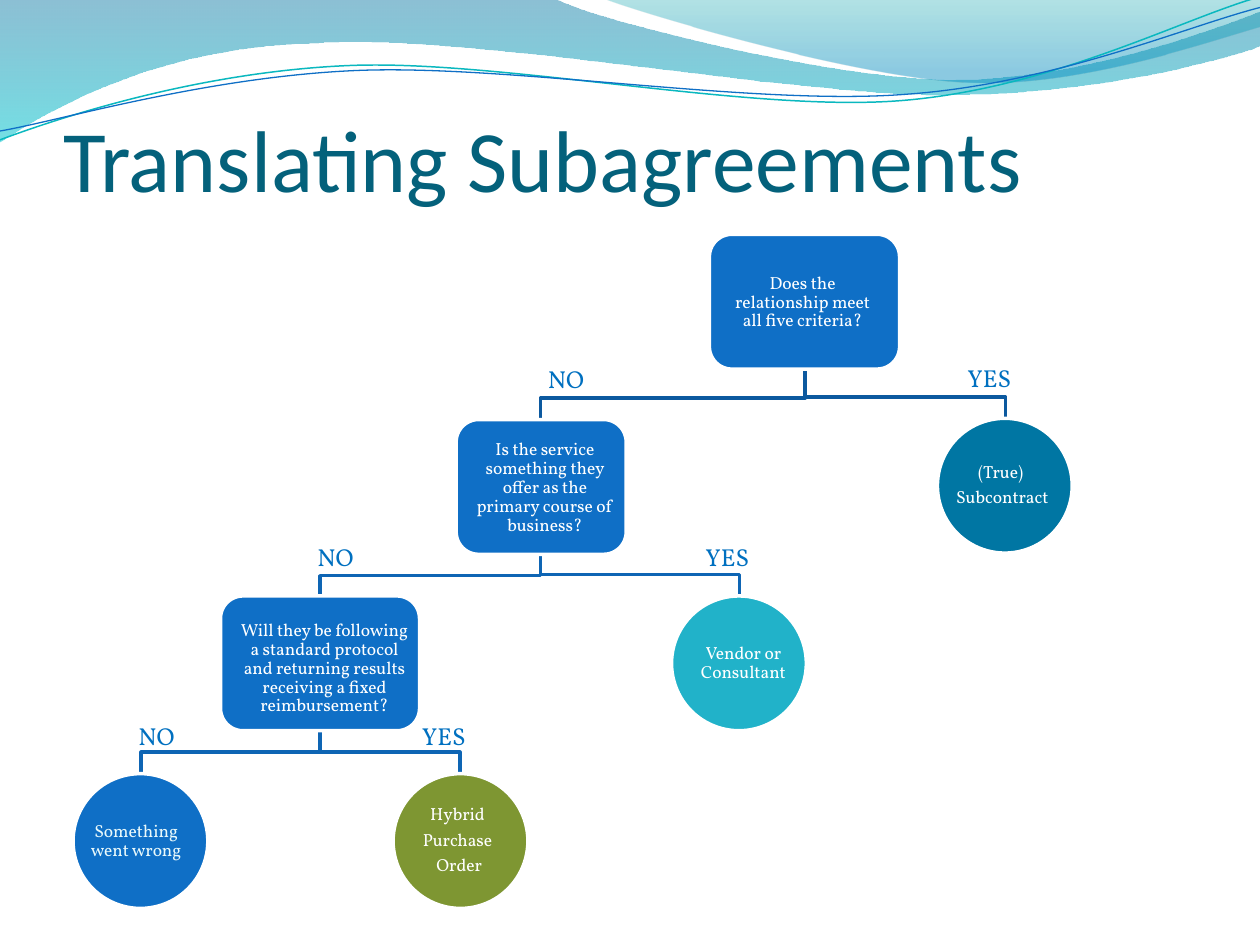
import math

from lxml import etree
from pptx import Presentation
from pptx.dml.color import RGBColor
from pptx.enum.shapes import MSO_SHAPE
from pptx.enum.text import MSO_ANCHOR, MSO_AUTO_SIZE, PP_ALIGN
from pptx.oxml.ns import qn
from pptx.util import Inches, Pt

ROUNDED, CIRCLE = MSO_SHAPE.ROUNDED_RECTANGLE, MSO_SHAPE.OVAL
MIDDLE, BOTTOM = MSO_ANCHOR.MIDDLE, MSO_ANCHOR.BOTTOM
LEFT, CENTER = PP_ALIGN.LEFT, PP_ALIGN.CENTER
GROW = MSO_AUTO_SIZE.SHAPE_TO_FIT_TEXT
FONT = "Vollkorn"
COLORS = {
    "title": "04617B", "label": "0070C0", "white": "FFFFFF", "pale": "E9F9FB",
    "blue": "0F6FC6", "green": "7E9632", "aqua": "21B2C9", "teal": "0076A3",
    "branch_top": "0C599F", "branch": "0E65B4", "wave_line": "0AB8BF",
    "wave_top": "0074A1", "wave_bottom": "00C6CF",
    "crest_top": "00A1A9", "crest_bottom": "008BBF",
}
NODE_H = 1.07
WAVE_TILT = -2.7

# A pair is a straight step to a point; six numbers are a Bézier curve.
WAVE = [(0, 0), (4.4, -0.01), (4.76, 0.17, 6.64, 0.63, 7.58, 0.63),
        (8.53, 0.63, 9.58, 0.26, 10, 0.09), (10.01, 0.36),
        (9.83, 0.44, 8.7, 0.76, 7.46, 0.75), (6.22, 0.75, 3.82, 0.28, 2.57, 0.34),
        (1.29, 0.36, 0.46, 0.83, -0.01, 1.13), (0, 0)]
CREST = [(4.79, -0.01), (5.09, 0.11, 6.82, 0.62, 7.69, 0.65),
         (8.56, 0.69, 9.61, 0.32, 10, 0.21), (10, 0), (4.79, -0.01)]
UPPER_LINE = [(0, 1.11), (0.48, 0.93, 1.58, 0.57, 2.77, 0.52),
              (3.95, 0.47, 5.93, 0.89, 7.13, 0.8), (8.33, 0.71, 9.38, 0.15, 9.98, -0.02)]
LOWER_LINE = [(0, 1.04), (0.47, 0.96, 1.64, 0.61, 2.83, 0.56),
              (4.03, 0.51, 5.97, 0.84, 7.17, 0.75), (8.36, 0.67, 9.41, 0.21, 10, 0.06)]

# Child centre x, top y of parent's exit, centre x of parent, bar y, child top, colour
BRANCHES = [
    (7.98, 2.93, 6.39, 3.15, 3.32, "branch_top"),
    (5.87, 4.4, 4.29, 4.56, 4.73, "branch"),
    (3.65, 5.8, 2.54, 5.97, 6.14, "branch"),
    (1.12, 5.8, 2.54, 5.97, 6.14, "branch"),
    (2.54, 4.4, 4.29, 4.57, 4.73, "branch"),
    (4.29, 2.93, 6.39, 3.16, 3.33, "branch_top"),
]
# Shape, left, top, width, fill, text box, text colour, paragraphs
NODES = [
    (ROUNDED, 5.63, 1.86, 1.51, "blue", (5.75, 1.8, 1.24, 1.2), "white",
     ["Does the relationship meet all five criteria?"]),
    (ROUNDED, 3.62, 3.33, 1.35, "blue", (3.71, 3.34, 1.23, 1.07), "white",
     ["Is the service something they offer as the primary course of business?"]),
    (ROUNDED, 1.75, 4.73, 1.58, "blue", (1.83, 4.77, 1.49, 1.07), "white",
     ["Will they be following a standard protocol and returning results "
      "receiving a fixed reimbursement?"]),
    (CIRCLE, 0.58, 6.14, NODE_H, "blue", (0.67, 6.14, 0.82, 1.07), "pale",
     ["Something went wrong"]),
    (CIRCLE, 3.12, 6.14, NODE_H, "green", (3.08, 6.27, 1.13, 0.8), "white",
     ["Hybrid ", "Purchase ", "Order"]),
    (CIRCLE, 5.33, 4.73, NODE_H, "aqua", (5.43, 4.89, 0.94, 0.75), "white",
     ["Vendor or Consultant"]),
    (CIRCLE, 7.44, 3.32, NODE_H, "teal", (7.48, 3.5, 0.95, 0.7), "white",
     ["(True) ", "Subcontract"]),
]
LABELS = [("YES", 5.5, 4.25), ("NO", 4.25, 2.84), ("NO", 2.42, 4.25),
          ("YES", 7.58, 2.83), ("NO", 1, 5.67), ("YES", 3.25, 5.67)]


def rgb(name):
    return RGBColor.from_string(COLORS[name])


def turn(step, center, degrees):
    """Rotate every point of a step clockwise about the centre."""
    cos, sin = math.cos(math.radians(degrees)), math.sin(math.radians(degrees))
    turned = []
    for x, y in zip(step[::2], step[1::2]):
        dx, dy = x - center[0], y - center[1]
        turned += [center[0] + dx * cos - dy * sin, center[1] + dx * sin + dy * cos]
    return turned


def add_path(slide, steps, close=False):
    """Draw the steps as a freeform, joining three points into each Bézier curve."""
    points = [(Inches(x), Inches(y)) for step in steps for x, y in zip(step[::2], step[1::2])]
    builder = slide.shapes.build_freeform(*points[0], scale=1.0)
    builder.add_line_segments(points[1:], close=close)
    sp = builder.convert_to_shape()
    sp.shadow.inherit = False
    segments = iter(list(sp._element.iter(qn("a:lnTo"))))
    for step in steps[1:]:
        segment = next(segments)
        if len(step) == 6:
            curve = etree.Element(qn("a:cubicBezTo"))
            segment.addprevious(curve)
            for part in (segment, next(segments), next(segments)):
                curve.append(part[0])
                part.getparent().remove(part)
    return sp


def add_line(slide, steps, color, width):
    sp = add_path(slide, steps)
    sp.fill.background()
    sp.line.color.rgb = rgb(color)
    sp.line.width = Pt(width)
    return sp


def add_tilted_line(slide, steps, center, color, width):
    level = [turn(step, center, -WAVE_TILT) for step in steps]
    add_line(slide, level, color, width).rotation = WAVE_TILT


def add_gradient_area(slide, steps, stops):
    """Fill a closed path from top to bottom; stops are (position, colour, opacity %)."""
    sp = add_path(slide, steps, close=True)
    sp.line.fill.background()
    sp.fill.gradient()
    sp.fill.gradient_angle = 270
    for stop, (position, color, opacity) in zip(sp.fill.gradient_stops, stops):
        stop.position = position
        stop.color.rgb = rgb(color)
    colors = sp._element.spPr.iter(qn("a:srgbClr"))
    for clr, (_, _, opacity) in zip(colors, stops):
        etree.SubElement(clr, qn("a:alpha")).set("val", str(opacity * 1000))


def add_waves(slide):
    add_gradient_area(slide, WAVE, [(0, "wave_top", 45), (1, "wave_bottom", 55)])
    add_gradient_area(slide, CREST, [(0, "crest_top", 30), (0.8, "crest_bottom", 45)])
    add_tilted_line(slide, UPPER_LINE, (4.99, 0.58), "wave_line", 0.85)
    add_tilted_line(slide, LOWER_LINE, (5, 0.59), "blue", 0.75)


def set_margins(tf, left, top, right, bottom):
    tf.margin_left, tf.margin_top = Inches(left), Inches(top)
    tf.margin_right, tf.margin_bottom = Inches(right), Inches(bottom)


def add_run(p, text, size, font, color):
    r = p.add_run()
    r.text = text
    r.font.size, r.font.name = Pt(size), font
    r.font.color.rgb = rgb(color)


def add_title(slide, text, left, top, width, height):
    """Place the title placeholder in front of the waves."""
    title = slide.shapes.title
    title._element.getparent().append(title._element)
    title.left, title.top = Inches(left), Inches(top)
    title.width, title.height = Inches(width), Inches(height)
    tf = title.text_frame
    tf.vertical_anchor = BOTTOM
    set_margins(tf, 0, 0.05, 0, 0)
    p = tf.paragraphs[0]
    p.alignment = LEFT
    add_run(p, text, 50, "Calibri", "title")


def add_text_box(slide, left, top, width, height):
    box = slide.shapes.add_textbox(Inches(left), Inches(top), Inches(width), Inches(height))
    box.text_frame.word_wrap = True
    return box.text_frame


def add_node(slide, kind, left, top, width, fill, text_box, color, lines):
    sp = slide.shapes.add_shape(kind, Inches(left), Inches(top), Inches(width), Inches(NODE_H))
    sp.shadow.inherit = False
    sp.fill.solid()
    sp.fill.fore_color.rgb = rgb(fill)
    sp.line.color.rgb = rgb("white")
    sp.line.width = Pt(2)
    tf = add_text_box(slide, *text_box)
    tf.vertical_anchor = MIDDLE
    set_margins(tf, 0.04, 0.04, 0.04, 0.04)
    for i, line in enumerate(lines):
        p = tf.add_paragraph() if i else tf.paragraphs[0]
        p.alignment = CENTER
        p.line_spacing, p.space_after = 0.9, Pt(3.5)
        add_run(p, line, 10, FONT, color)


def add_decision_tree(slide):
    for child_x, top, parent_x, bar, bottom, color in BRANCHES:
        elbow = [(parent_x, top), (parent_x, bar), (child_x, bar), (child_x, bottom)]
        add_line(slide, elbow, color, 2)
    for node in NODES:
        add_node(slide, *node)
    for text, left, top in LABELS:
        tf = add_text_box(slide, left, top, 0.58, 0.34)
        tf.auto_size = GROW
        add_run(tf.paragraphs[0], text, 14, FONT, "label")


def main():
    prs = Presentation()
    prs.slide_width, prs.slide_height = Inches(10), Inches(7.5)
    slide = prs.slides.add_slide(prs.slide_layouts[5])
    add_waves(slide)
    add_title(slide, "Translating Subagreements", 0.5, 0.77, 9, 0.9)
    add_decision_tree(slide)
    prs.save("out.pptx")


if __name__ == "__main__":
    main()
